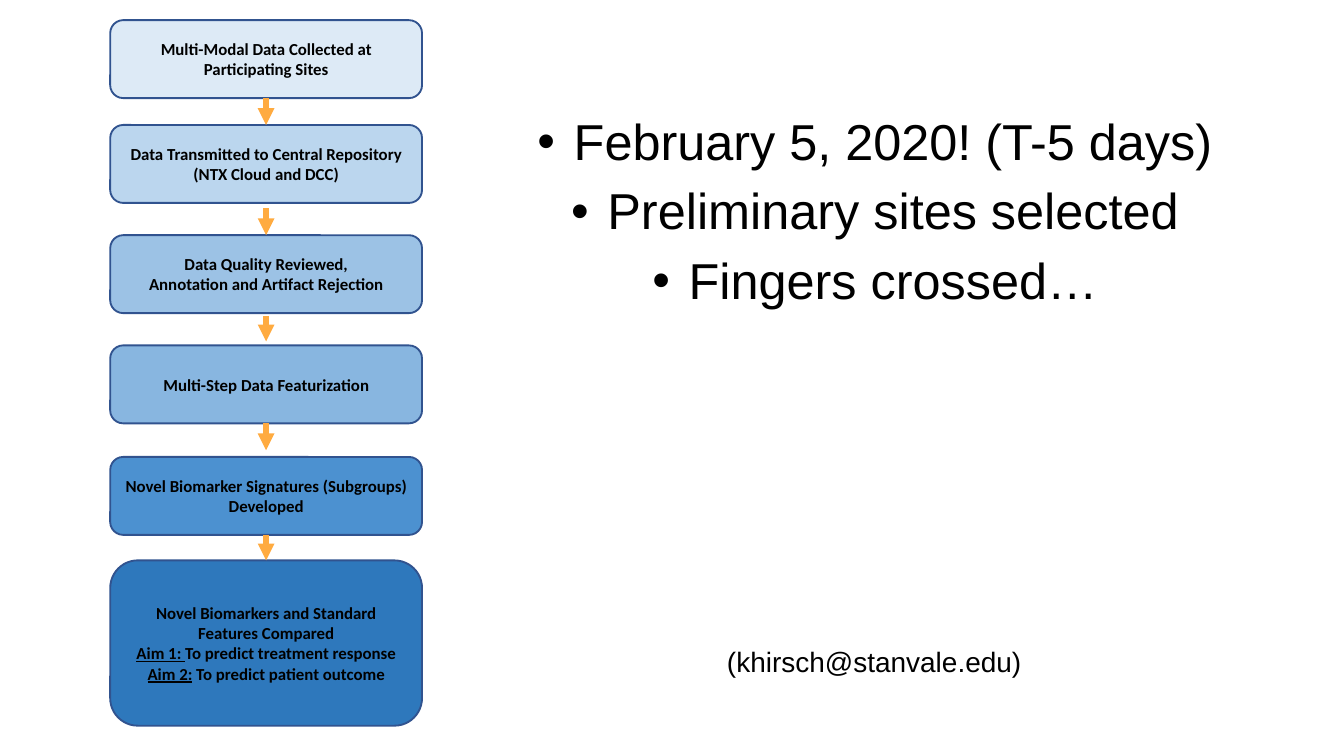
from lxml.etree import SubElement
from pptx import Presentation
from pptx.dml.color import RGBColor
from pptx.enum.shapes import MSO_CONNECTOR as Connector, MSO_SHAPE as Shape
from pptx.enum.text import MSO_ANCHOR as Anchor, PP_ALIGN as Align
from pptx.oxml.ns import qn
from pptx.util import Inches, Pt

THEME = {
    "text": RGBColor.from_string("000000"),
    "outline": RGBColor.from_string("31538F"),
    "arrow": RGBColor.from_string("FFAB40"),
    "steps": ["DDEAF6", "BBD6EE", "9CC2E5", "88B6E0", "4C91D0", "2E78BC"],
    "step_font": "Calibri",
    "body_font": "Arial",
    "step_size": Pt(9),
    "bullet_size": Pt(27),
    "contact_size": Pt(15),
}


def set_frame(frame):
    frame.word_wrap = True
    frame.margin_left = frame.margin_right = Inches(0.07)
    frame.margin_top = frame.margin_bottom = Inches(0.04)


def style_span(span, font, size, bold=False):
    span.font.name = font
    span.font.size = size
    span.font.bold = bold
    span.font.color.rgb = THEME["text"]


deck = Presentation()
deck.slide_width = Inches(10)
deck.slide_height = Inches(10 * 9 / 16)
page = deck.slides.add_slide(deck.slide_layouts[6])

LEFT, WIDTH = 0.82, 2.32
CENTER = LEFT + WIDTH / 2
steps = [
    (0.15, 0.58, [("", "Multi-Modal Data Collected at Participating Sites")]),
    (0.93, 0.58, [("", "Data Transmitted to Central Repository"), ("", "(NTX Cloud and DCC)")]),
    (1.75, 0.58, [("", "Data Quality Reviewed,"), ("", "Annotation and Artifact Rejection")]),
    (2.57, 0.58, [("", "Multi-Step Data Featurization")]),
    (3.4, 0.58, [("", "Novel Biomarker Signatures (Subgroups) Developed")]),
    (4.17, 1.23, [
        ("", "Novel Biomarkers and Standard Features Compared"),
        ("Aim 1: ", "To predict treatment response"),
        ("Aim 2:", " To predict patient outcome"),
    ]),
]

boxes = []
for (top, height, lines), color in zip(steps, THEME["steps"]):
    box = page.shapes.add_shape(
        Shape.ROUNDED_RECTANGLE, Inches(LEFT), Inches(top), Inches(WIDTH), Inches(height)
    )
    box.shadow.inherit = False
    box.fill.solid()
    box.fill.fore_color.rgb = RGBColor.from_string(color)
    box.line.color.rgb = THEME["outline"]
    box.line.width = Pt(1)
    frame = box.text_frame
    set_frame(frame)
    frame.vertical_anchor = Anchor.MIDDLE
    frame.text = "\n".join(label for label, _ in lines)
    for para, (label, wording) in zip(frame.paragraphs, lines):
        para.alignment = Align.CENTER
        for span in para.runs:
            span.font.underline = True
        para.add_run().text = wording
        for span in para.runs:
            style_span(span, THEME["step_font"], THEME["step_size"], bold=True)
    boxes.append(box)

ARROW_LENGTH = 0.19
TOUCH = Inches(0.01) + 1
for start, upper, lower in zip([0.73, 1.55, 2.35, 3.16, 3.98], boxes, boxes[1:]):
    arrow = page.shapes.add_connector(
        Connector.STRAIGHT,
        Inches(CENTER), Inches(start), Inches(CENTER), Inches(start + ARROW_LENGTH),
    )
    if abs(arrow.begin_y - upper.top - upper.height) <= TOUCH:
        arrow.begin_connect(upper, 2)
    if abs(arrow.end_y - lower.top) <= TOUCH:
        arrow.end_connect(lower, 0)
    arrow.line.color.rgb = THEME["arrow"]
    arrow.line.width = Pt(3)
    properties = arrow._element.spPr
    SubElement(properties.find(qn("a:ln")), qn("a:tailEnd"), type="triangle")
    SubElement(properties, qn("a:effectLst"))

news = page.shapes.add_textbox(Inches(3.53), Inches(0.83), Inches(5.95), Inches(4.36))
frame = news.text_frame
set_frame(frame)
frame.text = "\n".join([
    "February 5, 2020! (T-5 days)",
    "Preliminary sites selected",
    "Fingers crossed…",
    "(khirsch@stanvale.edu)",
])
*bullets, contact = frame.paragraphs
for para in frame.paragraphs:
    para.alignment = Align.CENTER
    para.line_spacing = 0.9
    para.space_before = Pt(8)
bullets[0].space_before = Pt(0)
contact.space_before = Pt(181)
style_span(contact.runs[0], THEME["body_font"], THEME["contact_size"])

for para in bullets:
    style_span(para.runs[0], THEME["body_font"], THEME["bullet_size"])
    properties = para._p.get_or_add_pPr()
    properties.set("marL", str(Inches(0.28)))
    properties.set("indent", str(Inches(-0.27)))
    bullet_color = SubElement(properties, qn("a:buClr"))
    SubElement(bullet_color, qn("a:srgbClr"), val=str(THEME["text"]))
    SubElement(properties, qn("a:buFont"), typeface=THEME["body_font"])
    SubElement(properties, qn("a:buChar"), char="•")

deck.save("out.pptx")
